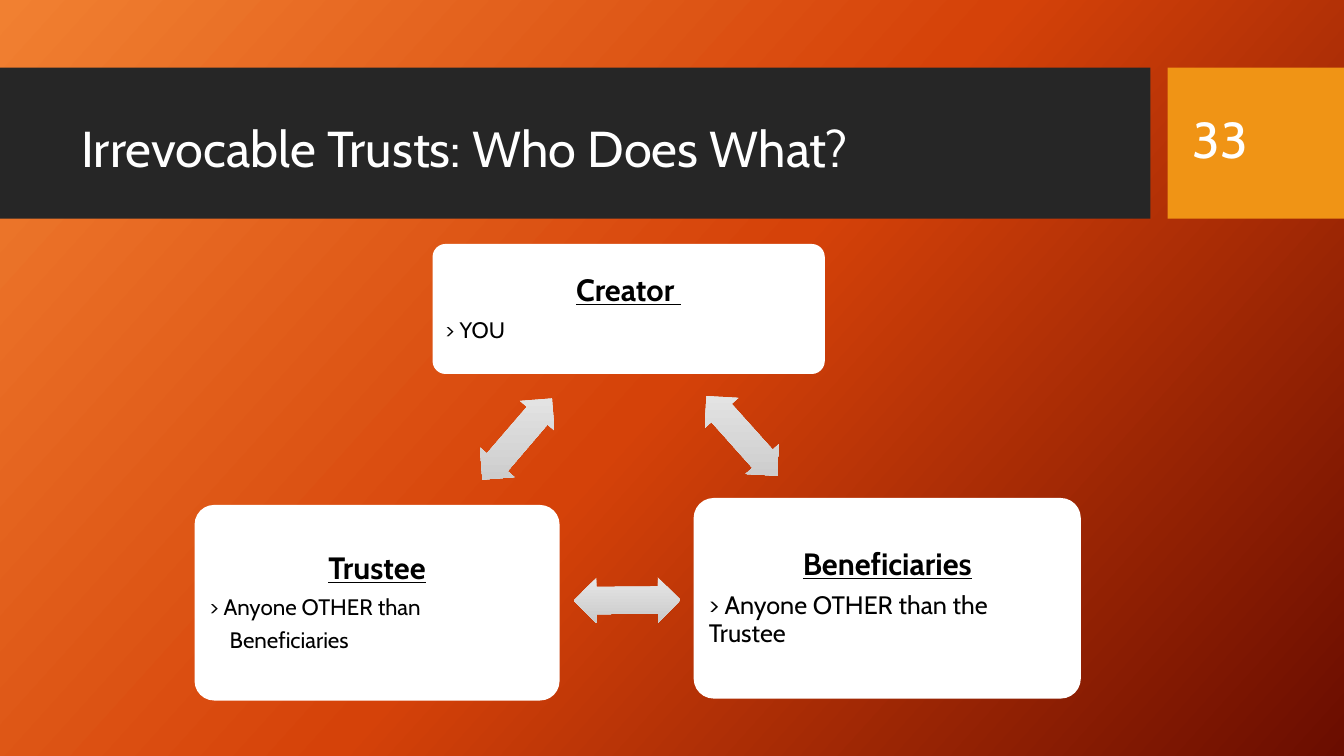
import copy
import pptx
import pptx.util
import pptx.dml.color
import pptx.enum.shapes
import pptx.enum.text

Inches, Pt = pptx.util.Inches, pptx.util.Pt
SHAPE = pptx.enum.shapes.MSO_SHAPE
ALIGN = pptx.enum.text.PP_ALIGN
COLORS = {
    "bar": "262626", "tab": "F09415", "card": "FFFFFF", "light": "FFFFFF",
    "ink": "000000", "glow": "F18031", "mid": "D54209", "deep": "6A0D00",
    "pale": "E7E7E7", "gray": "C9C9C9",
}


def tint(name):
    """Return the named colour."""
    return pptx.dml.color.RGBColor.from_string(COLORS[name])


def blend(fill, names, angle):
    """Fill with evenly spaced colours along a clockwise angle."""
    fill.gradient()
    fill.gradient_angle = 360 - angle
    stops = fill._fill._gradFill.gsLst
    while len(stops) < len(names):
        stops.append(copy.deepcopy(stops[0]))
    for i, (stop, name) in enumerate(zip(fill.gradient_stops, names)):
        stop.color.rgb = tint(name)
        stop.position = i / (len(names) - 1)


def block(slide, kind, box, color=None):
    """Add a plain shape without line or shadow."""
    shape = slide.shapes.add_shape(kind, *map(Inches, box))
    shape.shadow.inherit = False
    shape.line.fill.background()
    if color:
        shape.fill.solid()
        shape.fill.fore_color.rgb = tint(color)
    return shape


def style(para, size, color):
    """Set the font of a paragraph."""
    para.font.name = "Cabin"
    para.font.size = Pt(size)
    para.font.color.rgb = tint(color)


def frame(slide, box, pad=None):
    """Add a wrapping, vertically centred text box."""
    text = slide.shapes.add_textbox(*map(Inches, box)).text_frame
    text.word_wrap = True
    text.vertical_anchor = pptx.enum.text.MSO_ANCHOR.MIDDLE
    if pad is not None:
        text.margin_left = text.margin_right = Inches(pad)
        text.margin_top = text.margin_bottom = Inches(pad)
    return text


def label(slide, box, words):
    """Add one line of large header text."""
    para = frame(slide, box).paragraphs[0]
    para.text = words
    para.line_spacing = 0.9
    style(para, 36, "light")


def header(slide, box, title, page):
    """Draw the title bar and the page tab."""
    left, top, width, height = box
    gap, tab = 0.17, 1.75
    bar = width - gap - tab
    start = left + bar + gap
    block(slide, SHAPE.RECTANGLE, (left, top, bar, height), "bar")
    block(slide, SHAPE.RECTANGLE, (start, top, tab, height), "tab")
    label(slide, (left + 0.71, top + 0.17, 10.29, 1.31), title)
    label(slide, (start + 0.15, top + 0.15, 1.26, 1.19), page)


def card(slide, box, title, size, lines):
    """Draw a rounded card with a heading and lines of text."""
    left, top, width, height = box
    shape = block(slide, SHAPE.ROUNDED_RECTANGLE, box, "card")
    shape.adjustments[0] = 0.1
    edge = 0.03 * height
    inner = (left + edge, top + edge, width - 2 * edge, height - 2 * edge)
    text = frame(slide, inner, 0.09)
    for i, words in enumerate([title] + lines):
        para = text.add_paragraph() if i else text.paragraphs[0]
        points = size if i else 22
        para.text = words
        para.line_spacing = 0.9
        para.space_after = Pt(0.35 * points)
        style(para, points, "ink")
        if i == 0:
            para.alignment = ALIGN.CENTER
            para.font.bold = para.font.underline = True
        elif i > 1:
            para._p.get_or_add_pPr().set("marL", str(Inches(0.2)))


def arrow(slide, left, top, turn):
    """Draw a turned two-way arrow."""
    shape = block(slide, SHAPE.LEFT_RIGHT_ARROW, (left, top, 1.06, 0.45))
    shape.adjustments[0] = 0.6
    shape.adjustments[1] = 0.5
    shape.rotation = turn
    blend(shape.fill, ["pale", "gray"], 90)
    shape.fill._fill._gradFill.set("rotWithShape", "0")


def cycle(slide, box):
    """Draw the three roles and the arrows between them."""
    left, top = box[:2]
    roles = [
        (2.36, 0, 3.89, 1.29, "Creator ", 16, ["> YOU"]),
        (4.95, 2.52, 3.84, 1.99, "Beneficiaries", 18,
         ["> Anyone OTHER than the Trustee"]),
        (0, 2.59, 3.62, 1.94, "Trustee", 16,
         ["> Anyone OTHER than", "Beneficiaries"]),
    ]
    for x, y, width, height, title, size, lines in roles:
        card(slide, (left + x, top + y, width, height), title, size, lines)
    for x, y, turn in [(4.9, 1.68, 48.2), (3.76, 3.31, 179.6), (2.67, 1.71, 310.6)]:
        arrow(slide, left + x, top + y, turn)


def main():
    """Build and save the slide."""
    deck = pptx.Presentation()
    deck.slide_width, deck.slide_height = Inches(13.33), Inches(7.5)
    slide = deck.slides.add_slide(deck.slide_layouts[6])
    blend(slide.background.fill, ["glow", "mid", "deep"], 42)
    header(slide, (0, 0.67, 13.33, 1.5), "Irrevocable Trusts: Who Does What?", "33")
    cycle(slide, (1.93, 2.42, 8.79, 4.53))
    deck.save("out.pptx")


if __name__ == "__main__":
    main()
